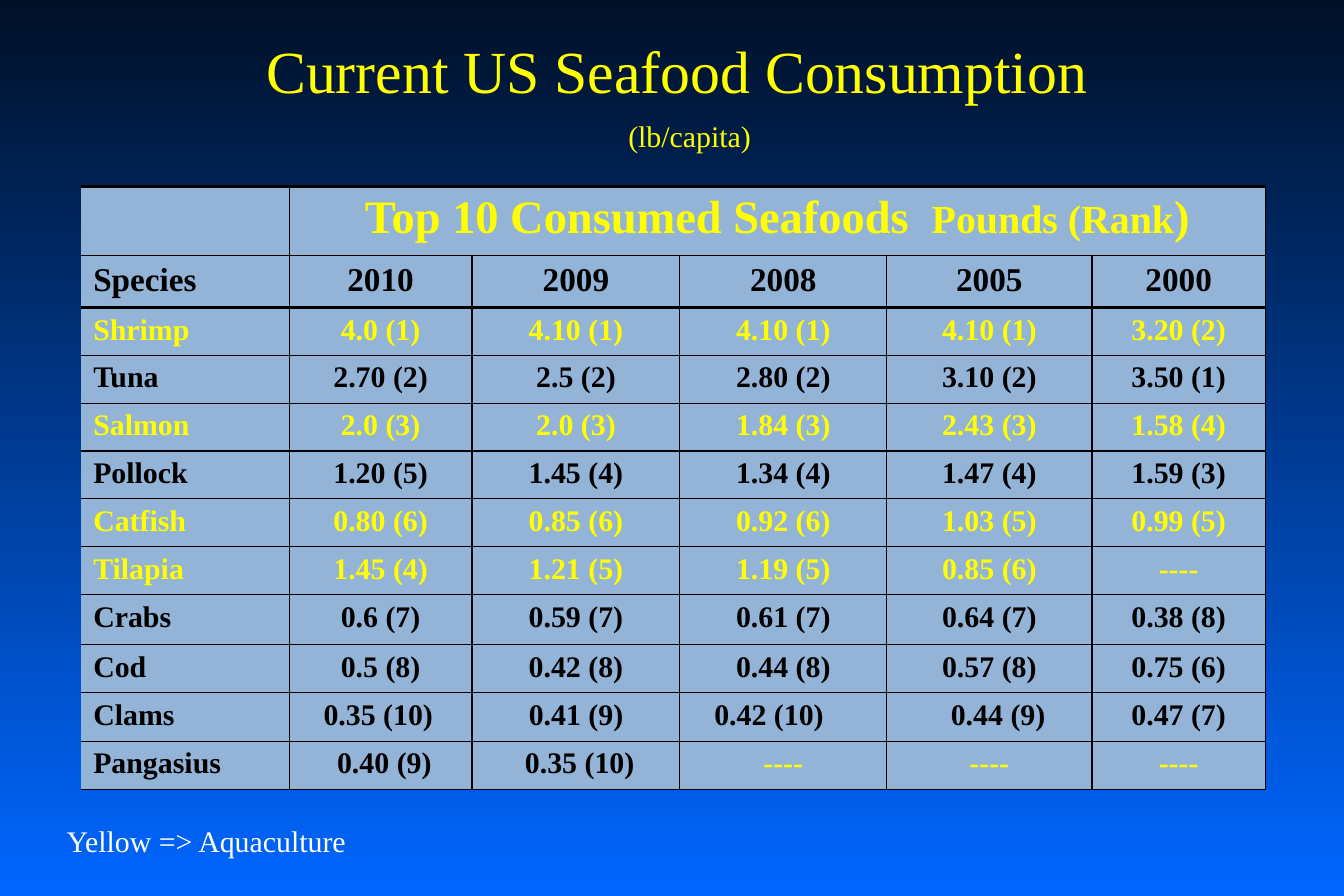
from dataclasses import dataclass

from lxml.etree import SubElement as Sub
from pptx import Presentation
from pptx.dml.color import RGBColor as Rgb
from pptx.enum.text import MSO_ANCHOR as Anchor, PP_ALIGN as Align
from pptx.oxml.ns import qn
from pptx.util import Pt


@dataclass(frozen=True)
class Theme:
    font: str = "Times New Roman"
    dark: Rgb = Rgb(0x00, 0x10, 0x27)
    blue: Rgb = Rgb(0x00, 0x66, 0xFF)
    cell: Rgb = Rgb(0x93, 0xB3, 0xD7)
    farmed: Rgb = Rgb(0xFF, 0xFF, 0x00)
    black: Rgb = Rgb(0, 0, 0)
    white: Rgb = Rgb(0xFF, 0xFF, 0xFF)
    title: float = 36
    gap: float = 25.2
    head: float = 28
    unit: float = 24
    year: float = 20
    body: float = 18
    thin: float = 0.75
    rule: float = 2
    edge: float = 2.25


T = Theme()
COLS = (125.3, 110.2, 125.3, 124.6, 123.8, 104.4)
ROWS = (41.8, 31) + (28.8,) * 6 + (30.2, 28.8, 29.5, 28.8)
PAD = 7.2
NONE = "----"
YEARS = ("Species", "2010", "2009", "2008", "2005", "2000")
FARMED = {"Shrimp", "Salmon", "Catfish", "Tilapia"}
CATCH = (
    ("Shrimp", "4.0 (1)", "4.10 (1)", "4.10 (1)", "4.10 (1)", "3.20 (2)"),
    ("Tuna", "2.70 (2)", "2.5 (2)", "2.80 (2)", "3.10 (2)", "3.50 (1)"),
    ("Salmon", "2.0 (3)", "2.0 (3)", "1.84 (3)", "2.43 (3)", "1.58 (4)"),
    ("Pollock", "1.20 (5)", "1.45 (4)", "1.34 (4)", "1.47 (4)", "1.59 (3)"),
    ("Catfish", "0.80 (6)", "0.85 (6)", "0.92 (6)", "1.03 (5)", "0.99 (5)"),
    ("Tilapia", "1.45 (4)", "1.21 (5)", "1.19 (5)", "0.85 (6)", NONE),
    ("Crabs", "0.6 (7)", "0.59 (7)", "0.61 (7)", "0.64 (7)", "0.38 (8)"),
    ("Cod", "0.5 (8)", "0.42 (8)", "0.44 (8)", "0.57 (8)", "0.75 (6)"),
    ("Clams", "0.35 (10)", "0.41 (9)", "0.42 (10)", "0.44 (9)", "0.47 (7)"),
    ("Pangasius", "0.40 (9)", "0.35 (10)", NONE, NONE, NONE),
)
# Cells set in from the left, by species and column
LEFT = {("Clams", 1): 13.5, ("Clams", 2): 27, ("Clams", 3): 13.5, ("Clams", 4): 31.5}
SHIFT = {("Pangasius", 1): 4.5, ("Pangasius", 2): 4.5}


def write(para, text, size, color, bold=False):
    run = para.add_run()
    run.text = text
    font = run.font
    font.name, font.size, font.bold = T.font, Pt(size), bold
    font.color.rgb = color


def add_box(slide, box):
    """Add a wrapped, middle-anchored text box and return its paragraph."""
    frame = slide.shapes.add_textbox(*map(Pt, box)).text_frame
    frame.word_wrap = True
    frame.vertical_anchor = Anchor.MIDDLE
    return frame.paragraphs[0]


def add_title(slide, box):
    para = add_box(slide, box)
    para.alignment = Align.CENTER
    write(para, "Current US Seafood Consumption ", T.title, T.farmed)
    para.add_line_break()
    write(para, " ", T.gap, T.farmed)
    write(para, "(lb/capita)", T.body, T.farmed)


def add_key(slide, box):
    write(add_box(slide, box), "Yellow => Aquaculture", T.body, T.white)


def style(cell, row, col):
    """Give the cell its borders, then its fill."""
    top = {0: T.edge, 2: T.rule}.get(row, T.thin)
    base = T.rule if row == 1 else T.thin
    sides = {"L": T.thin if col else 0, "R": T.thin, "T": top, "B": base}
    props = cell._tc.get_or_add_tcPr()
    for side, width in sides.items():
        line = Sub(props, qn(f"a:ln{side}"), w=str(Pt(width)))
        if width:
            Sub(Sub(line, qn("a:solidFill")), qn("a:srgbClr"), val=str(T.black))
        else:
            Sub(line, qn("a:noFill"))
    cell.fill.solid()
    cell.fill.fore_color.rgb = T.cell


def add_table(slide, box):
    grid = slide.shapes.add_table(len(ROWS), len(COLS), *map(Pt, box)).table
    grid.first_row = grid.horz_banding = False
    for col, width in zip(grid.columns, COLS):
        col.width = Pt(width)
    for row, height in zip(grid.rows, ROWS):
        row.height = Pt(height)
    for r in range(len(ROWS)):
        for c in range(len(COLS)):
            style(grid.cell(r, c), r, c)

    head = grid.cell(0, 1)
    head.merge(grid.cell(0, len(COLS) - 1))
    para = head.text_frame.paragraphs[0]
    para.alignment = Align.CENTER
    write(para, "Top 10 Consumed Seafoods  ", T.head, T.farmed, True)
    write(para, "Pounds (Rank", T.unit, T.farmed, True)
    write(para, ")", T.head, T.farmed, True)

    for r, line in enumerate((YEARS,) + CATCH, 1):
        name = line[0]
        for c, text in enumerate(line):
            cell, spot = grid.cell(r, c), (name, c)
            cell.margin_left = Pt(PAD + LEFT.get(spot, SHIFT.get(spot, 0)))
            para = cell.text_frame.paragraphs[0]
            para.alignment = Align.LEFT if c == 0 or spot in LEFT else Align.CENTER
            color = T.farmed if name in FARMED or text == NONE else T.black
            write(para, text, T.year if r == 1 else T.body, color, True)


def paint(slide):
    """Fill the background from dark at the top to blue at the foot."""
    fill = slide.background.fill
    fill.gradient()
    fill.gradient_angle = 270
    for stop, color in zip(fill.gradient_stops, (T.dark, T.blue)):
        stop.color.rgb = color


def main():
    deck = Presentation()
    deck.slide_width, deck.slide_height = Pt(810), Pt(540)
    slide = deck.slides.add_slide(deck.slide_layouts[6])
    paint(slide)
    add_title(slide, (0, 15, 825, 84))
    add_key(slide, (33, 492, 184, 29))
    add_table(slide, (49, 112.3, sum(COLS), sum(ROWS)))
    deck.save("out.pptx")


if __name__ == "__main__":
    main()
